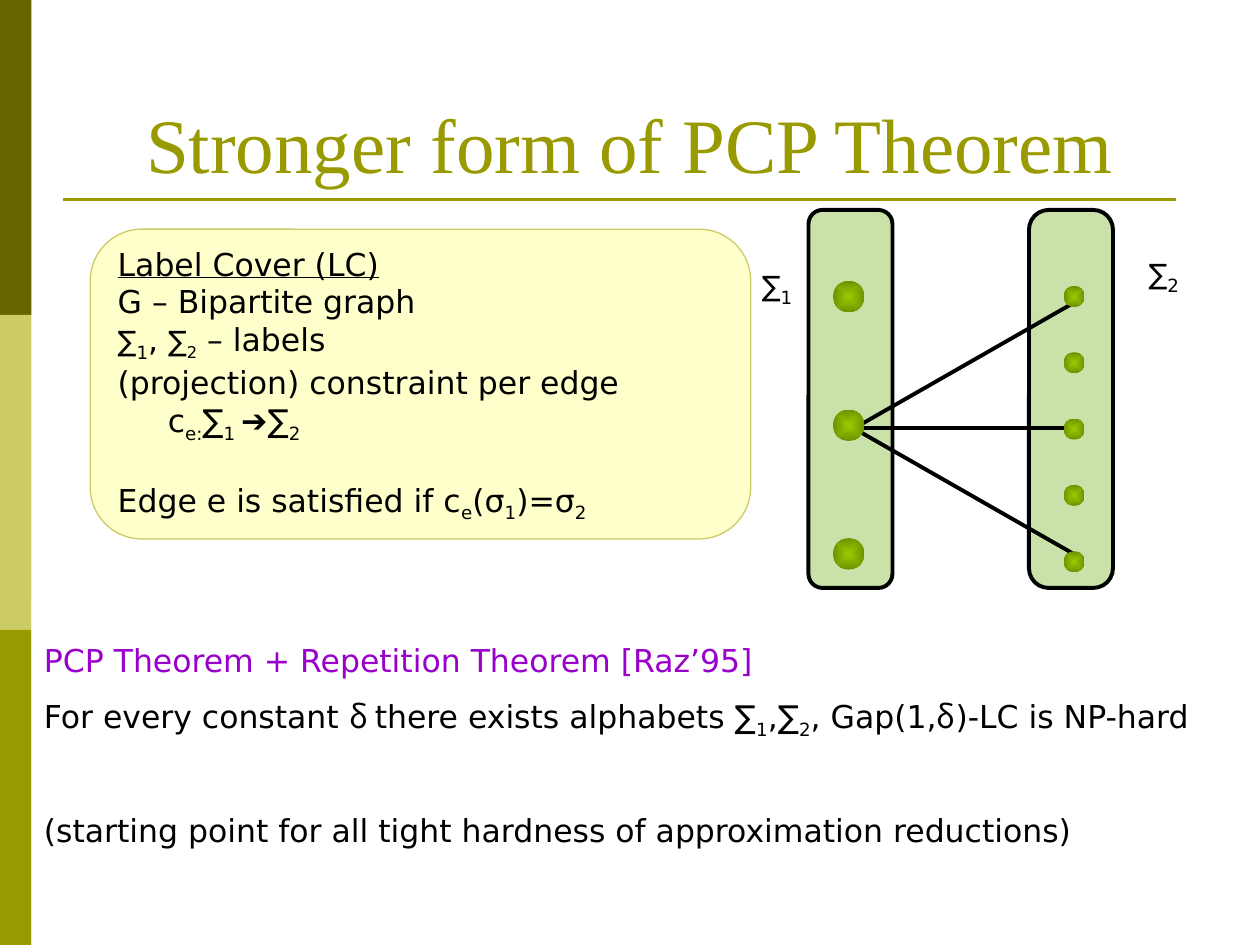
from lxml import etree
from pptx import Presentation
from pptx.dml.color import RGBColor
from pptx.enum.shapes import MSO_CONNECTOR, MSO_SHAPE
from pptx.enum.text import MSO_ANCHOR as ANCHOR, PP_ALIGN as ALIGN
from pptx.oxml import parse_xml
from pptx.oxml.ns import nsdecls, qn
from pptx.util import Pt

BLACK = RGBColor(0x00, 0x00, 0x00)
WHITE = RGBColor(0xFF, 0xFF, 0xFF)
DARK_OLIVE = RGBColor(0x66, 0x66, 0x00)
PALE_OLIVE = RGBColor(0xCC, 0xCC, 0x66)
OLIVE = RGBColor(0x99, 0x99, 0x00)
CREAM = RGBColor(0xFF, 0xFF, 0xCC)
PURPLE = RGBColor(0x99, 0x00, 0xCC)
COLUMN_GREEN = RGBColor(0xCA, 0xE2, 0xAA)
DOT_CENTRE = RGBColor(0x99, 0xCC, 0x00)
DOT_EDGE = RGBColor(0x6D, 0x92, 0x00)

BODY_FONT = "DejaVu Sans"
TITLE_FONT = "Times New Roman"
GREEK_FONT = "Noto Sans CJK TC"
SMALL = {"size": 16}
SUB = {"sub": True}
GREEK = {"font": GREEK_FONT}


def add_block(slide, kind, left, top, width, height, fill, line=None, line_width=0.75):
    block = slide.shapes.add_shape(kind, Pt(left), Pt(top), Pt(width), Pt(height))
    block.shadow.inherit = False
    if fill is not None:
        block.fill.solid()
        block.fill.fore_color.rgb = fill
    if line is None:
        block.line.fill.background()
    else:
        block.line.color.rgb = line
        block.line.width = Pt(line_width)
    return block


def add_dot(slide, left, top, size):
    dot = add_block(slide, MSO_SHAPE.OVAL, left, top, size, size, None)
    dot.fill.gradient()
    for stop, color in zip(dot.fill.gradient_stops, (DOT_CENTRE, DOT_EDGE)):
        stop.color.rgb = color
    # Radiate from the centre instead of along a line
    gradient = dot._element.spPr.find(qn("a:gradFill"))
    gradient.remove(gradient.find(qn("a:lin")))
    gradient.append(parse_xml(
        f'<a:path {nsdecls("a")} path="shape">'
        '<a:fillToRect l="50000" t="50000" r="50000" b="50000"/></a:path>'))


def add_line(slide, start, end, color, width):
    line = slide.shapes.add_connector(
        MSO_CONNECTOR.STRAIGHT, *(Pt(value) for value in (*start, *end)))
    line.line.color.rgb = color
    line.line.width = Pt(width)
    etree.SubElement(line._element.spPr, qn("a:effectLst"))


def add_textbox(slide, left, top, width, height):
    box = slide.shapes.add_textbox(Pt(left), Pt(top), Pt(width), Pt(height))
    box.text_frame.word_wrap = True
    return box


def write_paragraph(paragraph, pieces, color=BLACK, size=18, font=BODY_FONT,
                    align=ALIGN.LEFT, before=0, underline=False, indent=0):
    """Each piece is plain text or a (text, style) pair."""
    paragraph.alignment = align
    paragraph.space_before = Pt(before)
    paragraph.font.size = Pt(size)
    paragraph.font.name = font
    paragraph.font.color.rgb = color
    paragraph.font.underline = underline
    if indent:
        paragraph._p.get_or_add_pPr().set("marL", str(Pt(indent)))
    for piece in pieces:
        text, style = (piece, {}) if isinstance(piece, str) else piece
        run = paragraph.add_run()
        run.text = text
        if "size" in style:
            run.font.size = Pt(style["size"])
        if "font" in style:
            run.font.name = style["font"]
        if "sub" in style:
            run._r.get_or_add_rPr().set("baseline", "-25000")


def write_paragraphs(frame, rows):
    for index, (pieces, options) in enumerate(rows):
        paragraph = frame.add_paragraph() if index else frame.paragraphs[0]
        write_paragraph(paragraph, pieces, **options)


def add_frame(slide):
    # Side bar in three equal bands, and the rule under the title
    for index, color in enumerate((DARK_OLIVE, PALE_OLIVE, OLIVE)):
        add_block(slide, MSO_SHAPE.RECTANGLE, 0, 180 * index, 18, 180, color)
    add_line(slide, (36, 114), (672, 114), OLIVE, 1.5)


def add_title(slide):
    title = add_textbox(slide, 36, 21.6, 648, 90).text_frame
    title.vertical_anchor = ANCHOR.BOTTOM
    write_paragraph(title.paragraphs[0], ["Stronger form of PCP Theorem"],
                    OLIVE, 44, TITLE_FONT, ALIGN.CENTER)


def add_definition(slide):
    definition = add_block(slide, MSO_SHAPE.ROUNDED_RECTANGLE,
                           51.6, 131, 377.4, 177, CREAM, PALE_OLIVE).text_frame
    definition.word_wrap = True
    definition.vertical_anchor = ANCHOR.MIDDLE
    write_paragraphs(definition, [
        (["Label Cover (LC)"], {"underline": True}),
        (["G – Bipartite graph"], {}),
        ([("∑", SMALL), ("1", SUB), ", ", ("∑", SMALL),
          ("2", {"size": 16, "sub": True}), " – labels"], {}),
        (["(projection) constraint per edge"], {}),
        (["c", ("e:", SUB), "∑", ("1 ", SUB), ("➔", {"font": "Arial"}),
          "∑", ("2", SUB)], {"indent": 28.6}),
        (["Edge e is satisfied if c", ("e", SUB), "(σ", ("1", SUB),
          ")=σ", ("2", SUB)], {"before": 21}),
    ])


def add_theorem(slide):
    theorem = add_block(slide, MSO_SHAPE.RECTANGLE, 18, 342, 702, 198, WHITE).text_frame
    theorem.word_wrap = True
    theorem.vertical_anchor = ANCHOR.TOP
    theorem.margin_top = Pt(24.5)
    write_paragraphs(theorem, [
        (["PCP Theorem + Repetition Theorem [Raz’95]"],
         {"color": PURPLE, "before": 10}),
        (["For every constant ", ("δ ", GREEK), "there exists alphabets ∑",
          ("1", SUB), ",∑", ("2", SUB), ", Gap(1,", ("δ", GREEK),
          ")-LC is NP-hard"], {"before": 10}),
        (["(starting point for all tight hardness of approximation reductions)"],
         {"before": 41}),
    ])


def add_graph(slide):
    # The two vertex sets
    for left, rounding in ((462, 0.167), (588, 0.235)):
        column = add_block(slide, MSO_SHAPE.ROUNDED_RECTANGLE,
                           left, 120, 48, 216, COLUMN_GREEN, BLACK, 2.25)
        column.adjustments[0] = rounding

    # Edges from the middle left vertex
    for rise in (-72, 0, 72):
        add_line(slide, (488, 244.8), (614, 244.8 + rise), BLACK, 2.25)

    # Vertices
    for left, top, step, count, size in ((476, 160.5, 73.5, 3, 18),
                                         (607.8, 163.4, 37.9, 5, 12)):
        for index in range(count):
            add_dot(slide, left, top + step * index, size)

    # Alphabet of each side
    for number, left, top in (("1", 426, 150), ("2", 647, 143.5)):
        label = add_textbox(slide, left, top, 36, 24).text_frame
        label.margin_left = label.margin_right = 0
        write_paragraph(label.paragraphs[0], [("∑", SMALL), (number, SUB)],
                        align=ALIGN.CENTER, before=3.6)
        label.paragraphs[0].line_spacing = 0.8


def main():
    deck = Presentation()
    deck.slide_width, deck.slide_height = Pt(720), Pt(540)
    slide = deck.slides.add_slide(deck.slide_layouts[6])
    add_frame(slide)
    add_title(slide)
    add_definition(slide)
    add_theorem(slide)
    add_graph(slide)
    deck.save("out.pptx")


if __name__ == "__main__":
    main()
